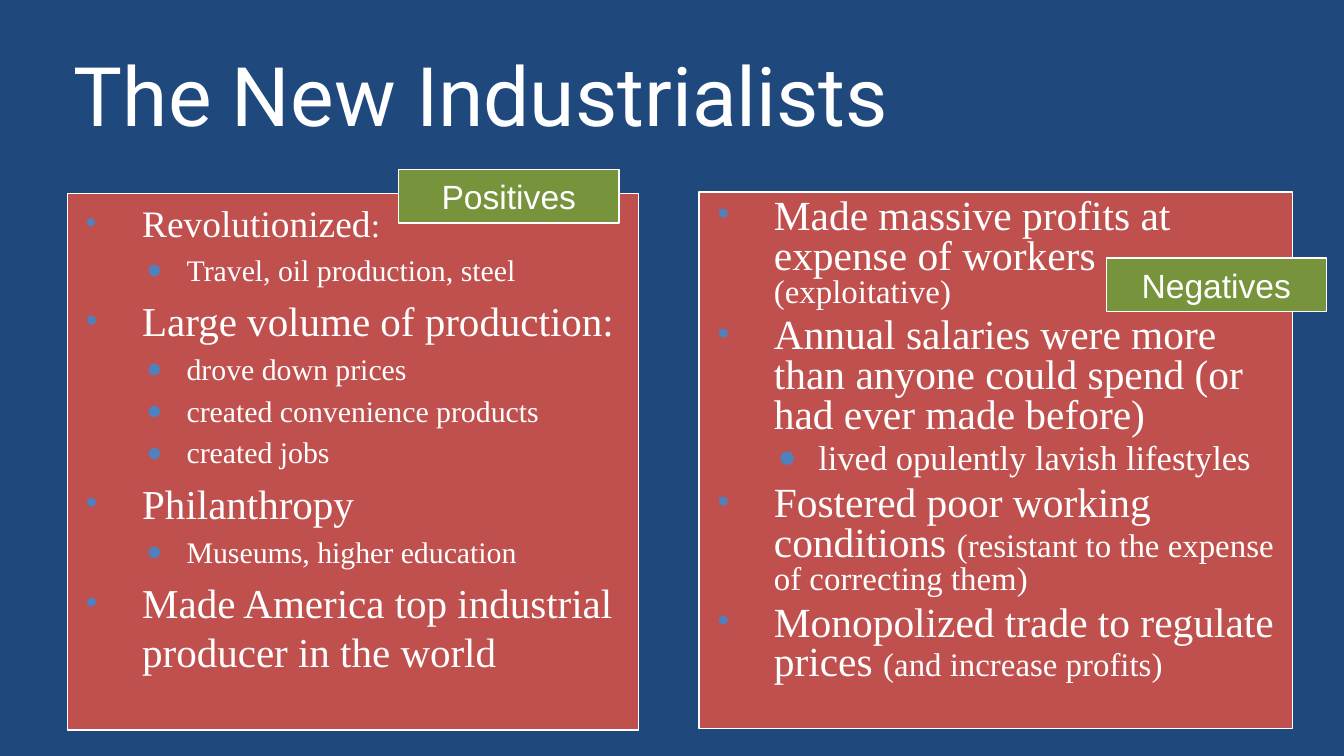
"""Builds the New Industrialists slide with its positives and negatives."""
from lxml import etree
from pptx import Presentation
from pptx.dml.color import RGBColor
from pptx.enum.shapes import MSO_SHAPE
from pptx.enum.text import MSO_ANCHOR, PP_ALIGN
from pptx.oxml.ns import qn
from pptx.util import Pt

RECT = MSO_SHAPE.RECTANGLE
TOP, MIDDLE = MSO_ANCHOR.TOP, MSO_ANCHOR.MIDDLE
LEFT, CENTER = PP_ALIGN.LEFT, PP_ALIGN.CENTER

NAVY = RGBColor(0x1F, 0x49, 0x7D)
RED = RGBColor(0xC0, 0x50, 0x4D)
GREEN = RGBColor(0x77, 0x93, 0x3C)
BLUE = RGBColor(0x4F, 0x81, 0xBD)
WHITE = RGBColor(0xFF, 0xFF, 0xFF)

# Margin, hanging indent, bullet and bullet size for each level
LEVELS = [(33.1, -30.2, "•", 80), (56.9, -21.6, "●", 90)]

GOOD = [
    (0, [("Revolutionized", 20), (":", 18)]),
    (1, [("Travel, oil production, steel", 16)]),
    (0, [("Large volume of production:", 22)]),
    (1, [("drove down prices", 16)]),
    (1, [("created convenience products", 16)]),
    (1, [("created jobs", 16)]),
    (0, [("Philanthropy", 22)]),
    (1, [("Museums, higher education", 16)]),
    (0, [("Made America top industrial producer in the world", 22)]),
]
BAD = [
    (0, [("Made massive profits at expense of workers ", 22.2),
         ("(exploitative)", 17.6)]),
    (0, [("Annual salaries were more than anyone could spend "
          "(or had ever made before)", 22.2)]),
    (1, [("lived opulently lavish lifestyles", 18.5)]),
    (0, [("Fostered poor working conditions ", 22.2),
         ("(resistant to the expense of correcting them)", 17.6)]),
    (0, [("Monopolized trade to regulate prices ", 22.2),
         ("(and increase profits)", 17.6)]),
]


def style(run, face, size):
    """Set the font of a run in white."""
    run.font.name = face
    run.font.size = Pt(size)
    run.font.color.rgb = WHITE


def add_box(slide, place, fill, anchor):
    """Add a filled rectangle with a thin white line."""
    box = slide.shapes.add_shape(RECT, *map(Pt, place))
    box.shadow.inherit = False
    box.fill.solid()
    box.fill.fore_color.rgb = fill
    box.line.color.rgb = WHITE
    box.line.width = Pt(0.75)
    box.text_frame.word_wrap = True
    box.text_frame.vertical_anchor = anchor
    return box


def add_child(parent, tag, **values):
    """Append a drawing element with its attributes."""
    return etree.SubElement(parent, qn(tag), values)


def set_bullet(para, level):
    """Give a paragraph its indent, space before and bullet."""
    margin, indent, mark, scale = LEVELS[level]
    para.level = level
    props = para._p.get_or_add_pPr()
    props.set("marL", str(Pt(margin)))
    props.set("indent", str(Pt(indent)))
    space = add_child(props, "a:spcBef")
    add_child(space, "a:spcPct", val="20000")
    tint = add_child(props, "a:buClr")
    add_child(tint, "a:srgbClr", val=str(BLUE))
    add_child(props, "a:buSzPct", val=str(scale * 1000))
    add_child(props, "a:buFont", typeface="Arial")
    add_child(props, "a:buChar", char=mark)


def add_panel(slide, place, items, spacing):
    """Add a red panel with a two-level bullet list."""
    frame = add_box(slide, place, RED, TOP).text_frame
    for index, (level, parts) in enumerate(items):
        para = frame.add_paragraph() if index else frame.paragraphs[0]
        para.alignment = LEFT
        para.line_spacing = spacing
        set_bullet(para, level)
        for text, size in parts:
            run = para.add_run()
            run.text = text
            style(run, "Times New Roman", size)


def add_tag(slide, left, top, text):
    """Add a green label."""
    frame = add_box(slide, (left, top, 118, 28.8), GREEN, MIDDLE).text_frame
    frame.text = text
    para = frame.paragraphs[0]
    para.alignment = CENTER
    style(para.runs[0], "Arial", 18)


def set_title(slide, text):
    """Place and format the title."""
    title = slide.shapes.title
    title.left, title.top, title.width, title.height = map(
        Pt, (36, 16, 648, 68))
    frame = title.text_frame
    frame.text = text
    frame.margin_left = frame.margin_right = Pt(3.6)
    frame.vertical_anchor = MIDDLE
    para = frame.paragraphs[0]
    para.alignment = LEFT
    style(para.runs[0], "Roboto", 44)


def main():
    """Build and save the slide."""
    deck = Presentation()
    deck.slide_width, deck.slide_height = Pt(720), Pt(405)
    slide = deck.slides.add_slide(deck.slide_layouts[5])
    slide.background.fill.solid()
    slide.background.fill.fore_color.rgb = NAVY
    set_title(slide, "The New Industrialists")
    add_panel(slide, (374.4, 102.8, 318.2, 287.4), BAD, 0.8)
    add_panel(slide, (36, 103.8, 306, 287.4), GOOD, 1)
    add_tag(slide, 213.6, 90.8, "Positives")
    add_tag(slide, 592.6, 138.2, "Negatives")
    deck.save("out.pptx")


if __name__ == "__main__":
    main()
